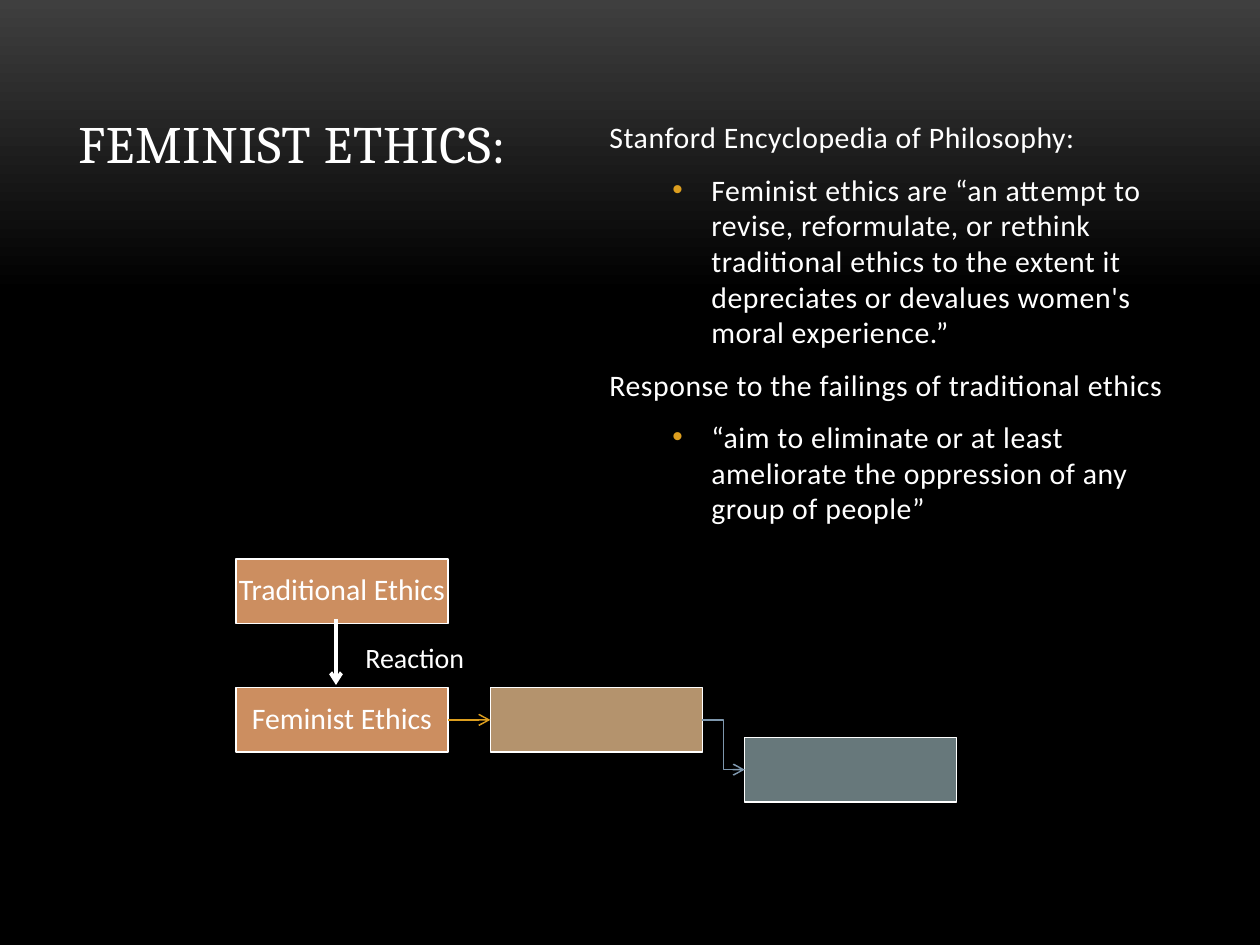
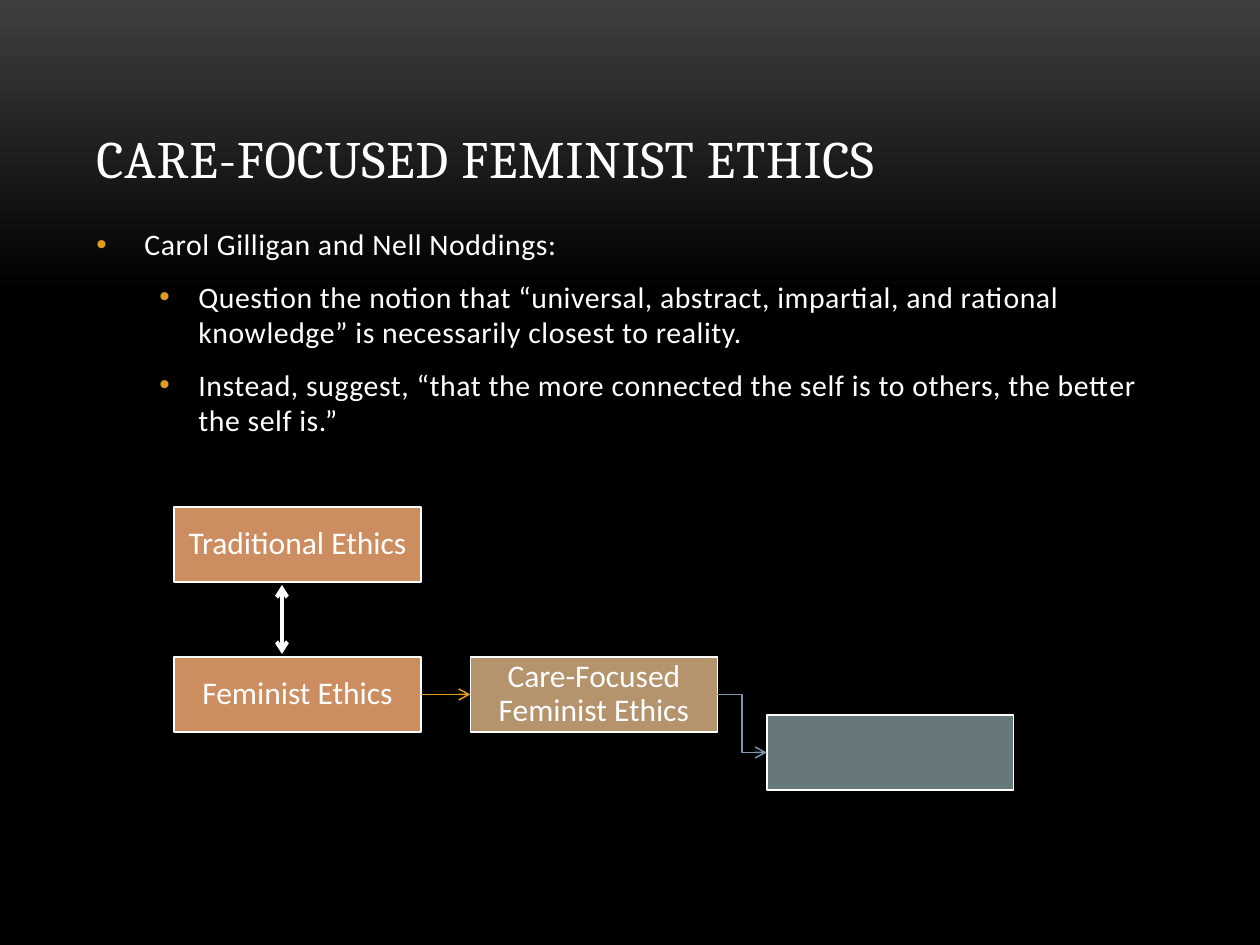
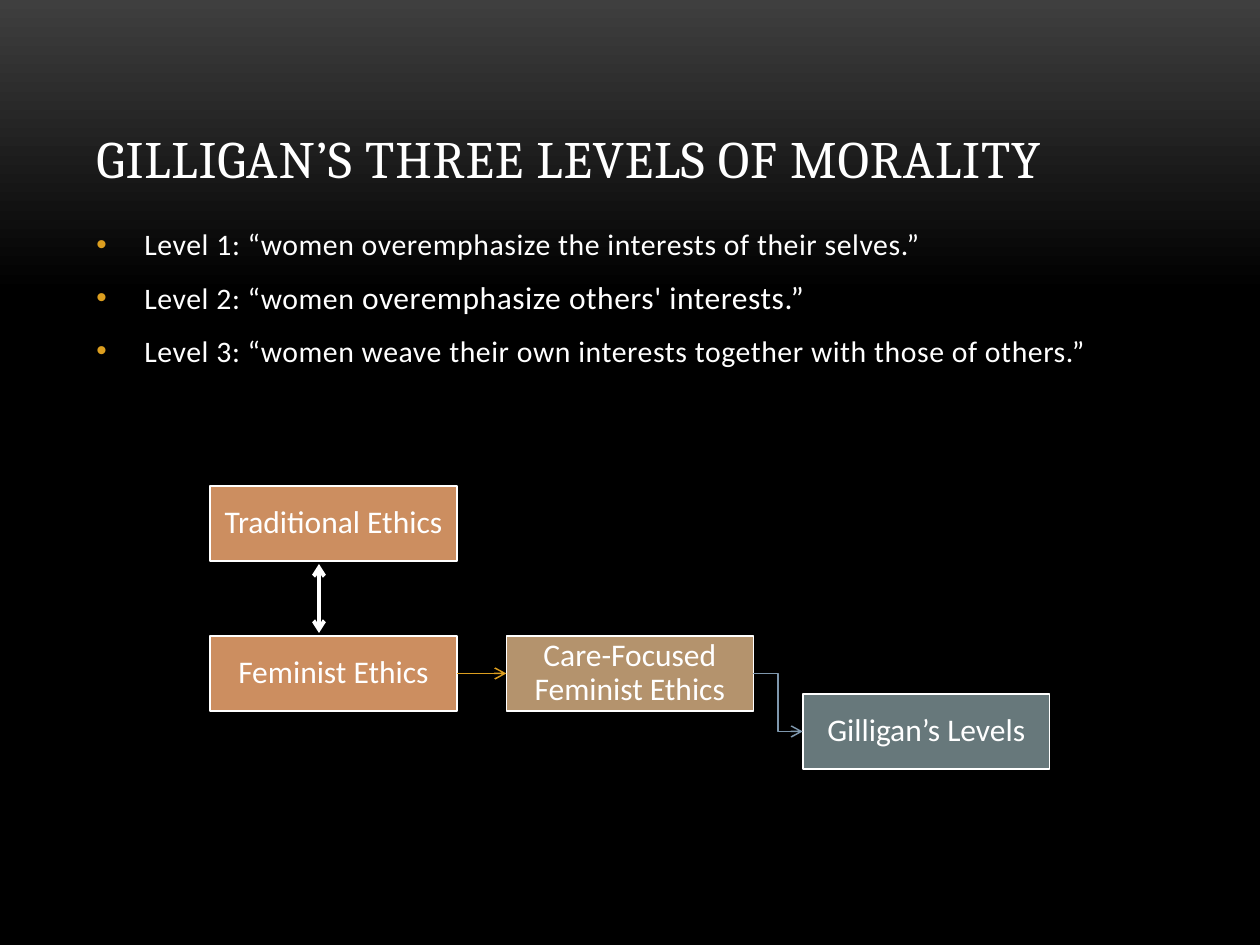
"""Builds three slides on feminist ethics."""
from lxml import etree
from pptx import Presentation, util as u
from pptx.dml.color import RGBColor
from pptx.enum import shapes, text
from pptx.oxml.ns import qn

WHITE, GOLD, STEEL = "FFFFFF", "DC9E1F", "7E97AD"
FILLS = ["CC8E60", "CC8E60", "B4936D", "67787B"]
HEAD, BODY = "Cambria", "Calibri"
INDENT = {1: (48, -48), 2: (102, -39)}


def px(num):
    """Turn pixels into EMU."""
    return u.Emu(round(num * 914400 / 126))


def rgb(code):
    """Turn a hex string into a colour."""
    return RGBColor.from_string(code)


def style(run, size, face=BODY, gap=0):
    """Set size, face, white colour and letter spacing of a run."""
    run.font.size = u.Pt(size)
    run.font.name = face
    run.font.color.rgb = rgb(WHITE)
    if gap:
        run.font._element.set("spc", str(gap))


def add_box(slide, area):
    """Add an empty wrapping text box and return its frame."""
    frame = slide.shapes.add_textbox(*map(px, area)).text_frame
    frame.word_wrap = True
    return frame


def add_title(slide, words, area=(84, 38, 1092, 157)):
    """Add a slide title that sits on the bottom of its area."""
    frame = add_box(slide, area)
    frame.vertical_anchor = text.MSO_ANCHOR.BOTTOM
    frame.text = words
    style(frame.paragraphs[0].runs[0], 30, HEAD, 50)


def add_bullet(para, level):
    """Give a paragraph a gold bullet and a hanging indent."""
    props = para._p.get_or_add_pPr()
    left, hang = INDENT[level]
    props.set("marL", str(px(left)))
    props.set("indent", str(px(hang)))
    tone = etree.SubElement(props, qn("a:buClr"))
    etree.SubElement(tone, qn("a:srgbClr"), val=GOLD)
    etree.SubElement(props, qn("a:buFont"), typeface="Arial")
    etree.SubElement(props, qn("a:buChar"), char="•")


def add_body(slide, items, area=(84, 220, 1092, 567)):
    """Add body paragraphs, each a level followed by (words, size) runs."""
    frame = add_box(slide, area)
    for num, (level, *parts) in enumerate(items):
        para = frame.add_paragraph() if num else frame.paragraphs[0]
        if level:
            add_bullet(para, level)
        para.space_before = u.Pt(3.4 if num else 0)
        para.space_after = u.Pt(6)
        for words, size in parts:
            run = para.add_run()
            run.text = words
            style(run, size, gap=30)


def add_node(slide, area, fill, words, size):
    """Add one box of the chart."""
    node = slide.shapes.add_shape(shapes.MSO_SHAPE.RECTANGLE, *map(px, area))
    node.shadow.inherit = False
    node.fill.solid()
    node.fill.fore_color.rgb = rgb(fill)
    node.line.color.rgb = rgb(WHITE)
    node.line.width = u.Pt(0.85)
    if words:
        frame = node.text_frame
        frame.word_wrap = True
        frame.vertical_anchor = text.MSO_ANCHOR.MIDDLE
        frame.margin_left = frame.margin_right = px(1)
        frame.margin_top = frame.margin_bottom = px(1)
        frame.text = words
        para = frame.paragraphs[0]
        para.alignment = text.PP_ALIGN.CENTER
        para.line_spacing = 0.9
        style(para.runs[0], size)
    return node


def add_arrow(slide, ends, color, width, kind="STRAIGHT", both=False):
    """Add a connector with an open arrowhead at one or both ends."""
    form = shapes.MSO_CONNECTOR[kind]
    link = slide.shapes.add_connector(form, *map(px, ends))
    link.line.color.rgb = rgb(color)
    link.line.width = u.Pt(width)
    line = link.line._get_or_add_ln()
    for tag in ["a:headEnd", "a:tailEnd"] if both else ["a:tailEnd"]:
        etree.SubElement(line, qn(tag), type="arrow")
    etree.SubElement(link._element.spPr, qn("a:effectLst"))
    return link


def add_flow(slide, left, top, wide, names, size):
    """Add the four linked boxes, spaced in proportion to their width."""
    high, step = wide * 0.304, wide * 1.2
    row, drop = top + wide * 0.607, wide * 0.235
    spots = [(left, top), (left, row), (left + step, row),
             (left + 2 * step, row + drop)]
    nodes = [add_node(slide, (*spot, wide, high), fill, name, size)
             for spot, fill, name in zip(spots, FILLS, names)]
    links = [(GOLD, "STRAIGHT"), (STEEL, "ELBOW")]
    for start, end, (color, kind) in zip(nodes[1:], nodes[2:], links):
        link = add_arrow(slide, (0, 0, 1, 1), color, 0.85, kind)
        link.begin_connect(start, 3)
        link.end_connect(end, 1)


def add_page(deck):
    """Add a slide on the blank layout."""
    return deck.slides.add_slide(deck.slide_layouts[6])


def set_back(deck):
    """Give every slide the grey to black background."""
    fill = deck.slide_master.background.fill
    fill.gradient()
    fill.gradient_angle = 270
    for stop, spot, color in zip(fill.gradient_stops, (0, 0.31),
                                 ("3F3F3F", "000000")):
        stop.position = spot
        stop.color.rgb = rgb(color)


def make_intro(deck):
    """Build the slide that defines feminist ethics."""
    page = add_page(deck)
    add_title(page, "FEMINIST ETHICS:", (66, 93, 498, 87))
    add_body(page, [
        (0, ("Stanford Encyclopedia of Philosophy:", 17)),
        (2, ("Feminist ethics are “an attempt to revise, reformulate, or "
             "rethink traditional ethics to the extent it depreciates or "
             "devalues women's moral experience.”", 17)),
        (0, ("Response to the failings of traditional ethics", 17)),
        (2, ("“aim to eliminate or at least ameliorate the oppression of "
             "any group of people”", 17)),
    ], (597, 113, 580, 567))
    names = ["Traditional Ethics", "Feminist Ethics", "", ""]
    add_flow(page, 236, 559, 212, names, 17)
    add_arrow(page, (336, 619, 336, 685), WHITE, 2.25)
    label = add_box(page, (353, 634, 130, 47))
    label.text = "Reaction"
    style(label.paragraphs[0].runs[0], 16)


def make_care(deck):
    """Build the slide on care-focused ethics."""
    page = add_page(deck)
    add_title(page, "CARE-FOCUSED FEMINIST ETHICS")
    add_body(page, [
        (1, ("Carol Gilligan and Nell Noddings:", 17)),
        (2, ("Question the notion that “universal, abstract, impartial, and "
             "rational knowledge” is necessarily closest to reality.", 17)),
        (2, ("Instead, suggest, “that the more connected the self is to "
             "others, the better the self is.”", 17)),
    ])
    names = ["Traditional Ethics", "Feminist Ethics",
             "Care-Focused Feminist Ethics", ""]
    add_flow(page, 174, 507, 247, names, 18)
    add_arrow(page, (282, 585, 282, 654), WHITE, 2.25, both=True)


def make_levels(deck):
    """Build the slide on the three levels."""
    page = add_page(deck)
    add_title(page, "GILLIGAN’S THREE LEVELS OF MORALITY")
    add_body(page, [
        (1, ("Level 1: “women overemphasize the interests of their "
             "selves.”", 17)),
        (1, ("Level 2: “women ", 17),
            ("overemphasize others' interests.”", 18)),
        (1, ("Level 3: “women weave their own interests together with "
             "those of others.”", 17)),
    ])
    names = ["Traditional Ethics", "Feminist Ethics",
             "Care-Focused Feminist Ethics", "Gilligan’s Levels"]
    add_flow(page, 210, 486, 247, names, 18)
    add_arrow(page, (319, 564, 319, 633), WHITE, 2.25, both=True)


def main():
    """Build and save the deck."""
    deck = Presentation()
    deck.slide_width, deck.slide_height = px(1260), px(945)
    set_back(deck)
    make_intro(deck)
    make_care(deck)
    make_levels(deck)
    deck.save("out.pptx")


if __name__ == "__main__":
    main()
